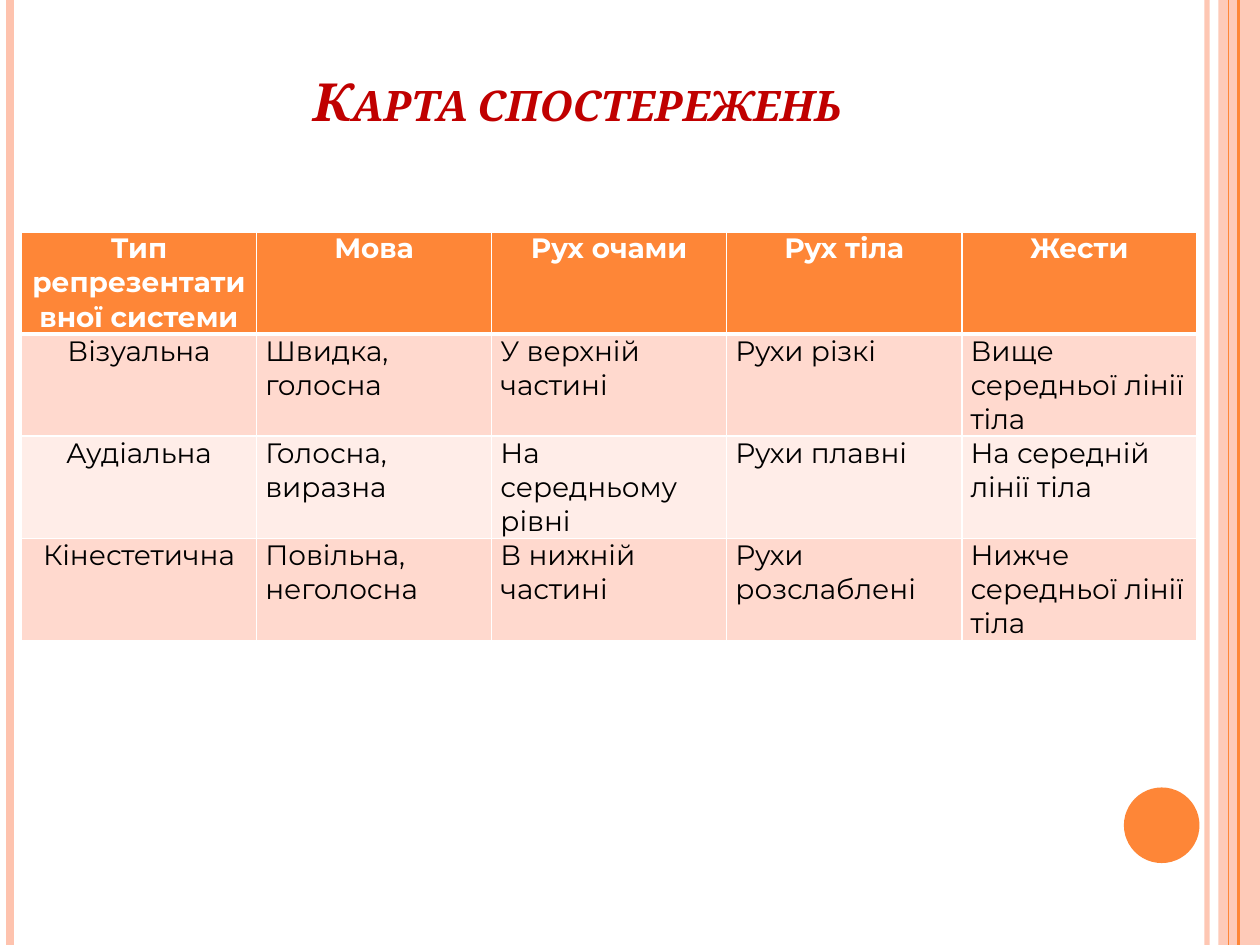
"""Build the observation chart slide."""
from lxml import etree
from pptx import Presentation
from pptx.dml.color import RGBColor
from pptx.enum.shapes import MSO_CONNECTOR, MSO_SHAPE
from pptx.enum.text import MSO_ANCHOR, PP_ALIGN
from pptx.oxml.ns import qn
from pptx.util import Inches, Pt

STRAIGHT = MSO_CONNECTOR.STRAIGHT
RECTANGLE, OVAL = MSO_SHAPE.RECTANGLE, MSO_SHAPE.OVAL
BOTTOM = MSO_ANCHOR.BOTTOM
CENTER, LEFT = PP_ALIGN.CENTER, PP_ALIGN.LEFT

ORANGE = RGBColor(0xFE, 0x86, 0x37)
PEACH = RGBColor(0xFE, 0xC3, 0xAE)
BAND_DARK = RGBColor(0xFF, 0xD9, 0xCE)
BAND_LIGHT = RGBColor(0xFF, 0xED, 0xE8)
RED = RGBColor(0xC0, 0x00, 0x00)
WHITE = RGBColor(0xFF, 0xFF, 0xFF)
BLACK = RGBColor(0x00, 0x00, 0x00)

SLIDE_WIDTH, SLIDE_HEIGHT = 10, 7.5
COLUMN_WIDTH, ROW_HEIGHT = 1.866, 0.81

STRIPES = [
    (9.58, PEACH, 3, 93),
    (0.08, PEACH, 4.5, 100),
    (9.83, ORANGE, 1.5, 100),
    (9.75, ORANGE, 0.75, 100),
]
OBSERVATIONS = [
    ["Тип репрезентативної системи", "Мова", "Рух очами", "Рух тіла", "Жести"],
    ["Візуальна", "Швидка, голосна", "У верхній частині", "Рухи різкі",
     "Вище середньої лінії тіла"],
    ["Аудіальна", "Голосна, виразна", "На середньому рівні", "Рухи плавні",
     "На середній лінії тіла"],
    ["Кінестетична", "Повільна, неголосна", "В нижній частині", "Рухи розслаблені",
     "Нижче середньої лінії тіла"],
]


def set_opacity(shape, percent):
    """Make the first solid colour of a shape partly transparent."""
    color = next(shape._element.spPr.iter(qn("a:srgbClr")))
    etree.SubElement(color, qn("a:alpha"), val=str(percent * 1000))


def add_stripe(slide, x, color, width, opacity):
    """Draw a vertical line over the full slide height."""
    stripe = slide.shapes.add_connector(
        STRAIGHT, Inches(x), 0, Inches(x), Inches(SLIDE_HEIGHT))
    stripe.line.color.rgb = color
    stripe.line.width = Pt(width)
    if opacity < 100:
        set_opacity(stripe, opacity)
    etree.SubElement(stripe._element.spPr, qn("a:effectLst"))


def add_plain_shape(slide, kind, box, color):
    """Add a filled shape without outline or shadow."""
    shape = slide.shapes.add_shape(kind, *map(Inches, box))
    shape.shadow.inherit = False
    shape.fill.solid()
    shape.fill.fore_color.rgb = color
    shape.line.fill.background()
    return shape


def add_run(paragraph, text, font_name, size, color, bold):
    """Add one formatted run to a paragraph."""
    run = paragraph.add_run()
    run.text = text
    run.font.name = font_name
    run.font.size = Pt(size)
    run.font.color.rgb = color
    run.font.bold = bold
    return run


def fill_title(slide, text):
    """Place the title and set it in italic small capitals."""
    title = slide.shapes.title
    title.left, title.top = Inches(0.5), Inches(0.3)
    title.width, title.height = Inches(8.17), Inches(1.25)
    frame = title.text_frame
    frame.word_wrap = True
    frame.vertical_anchor = BOTTOM
    frame.margin_bottom = Inches(0.5)
    paragraph = frame.paragraphs[0]
    paragraph.alignment = CENTER
    run = add_run(paragraph, text, "Cambria", 30, RED, True)
    run.font.italic = True
    run._r.get_or_add_rPr().set("cap", "small")


def set_borders(cell, bottom_width):
    """Give a cell white borders, with its own bottom width."""
    properties = cell._tc.get_or_add_tcPr()
    widths = {"a:lnL": 1, "a:lnR": 1, "a:lnT": 1, "a:lnB": bottom_width}
    for index, (tag, width) in enumerate(widths.items()):
        line = etree.Element(qn(tag), w=str(Pt(width)))
        fill = etree.SubElement(line, qn("a:solidFill"))
        etree.SubElement(fill, qn("a:srgbClr"), val=str(WHITE))
        properties.insert(index, line)


def fill_cell(cell, text, row, column):
    """Write and format one table cell by its place in the grid."""
    header = row == 0
    cell.margin_left = cell.margin_right = Inches(0.07)
    cell.margin_top = cell.margin_bottom = 0
    cell.fill.solid()
    cell.fill.fore_color.rgb = ORANGE if header else (BAND_LIGHT, BAND_DARK)[row % 2]
    set_borders(cell, 3 if header else 1)
    paragraph = cell.text_frame.paragraphs[0]
    paragraph.alignment = CENTER if header or column == 0 else LEFT
    add_run(paragraph, text, "Montserrat", 16, WHITE if header else BLACK, header)


def add_observation_table(slide, rows):
    """Add the table with equal columns and rows."""
    column_count = len(rows[0])
    table = slide.shapes.add_table(
        len(rows), column_count, Inches(0.17), Inches(1.84),
        Inches(COLUMN_WIDTH * column_count), Inches(ROW_HEIGHT * len(rows))).table
    for row, texts in enumerate(rows):
        for column, text in enumerate(texts):
            fill_cell(table.cell(row, column), text, row, column)


def main():
    """Build the slide and save it."""
    presentation = Presentation()
    presentation.slide_width = Inches(SLIDE_WIDTH)
    presentation.slide_height = Inches(SLIDE_HEIGHT)
    slide = presentation.slides.add_slide(presentation.slide_layouts[5])
    band = add_plain_shape(slide, RECTANGLE, (9.67, 0, 0.33, SLIDE_HEIGHT), PEACH)
    set_opacity(band, 87)
    for stripe in STRIPES:
        add_stripe(slide, *stripe)
    add_plain_shape(slide, OVAL, (8.92, 6.25, 0.6, 0.6), ORANGE)
    fill_title(slide, "Карта спостережень")
    add_observation_table(slide, OBSERVATIONS)
    presentation.save("out.pptx")


if __name__ == "__main__":
    main()
